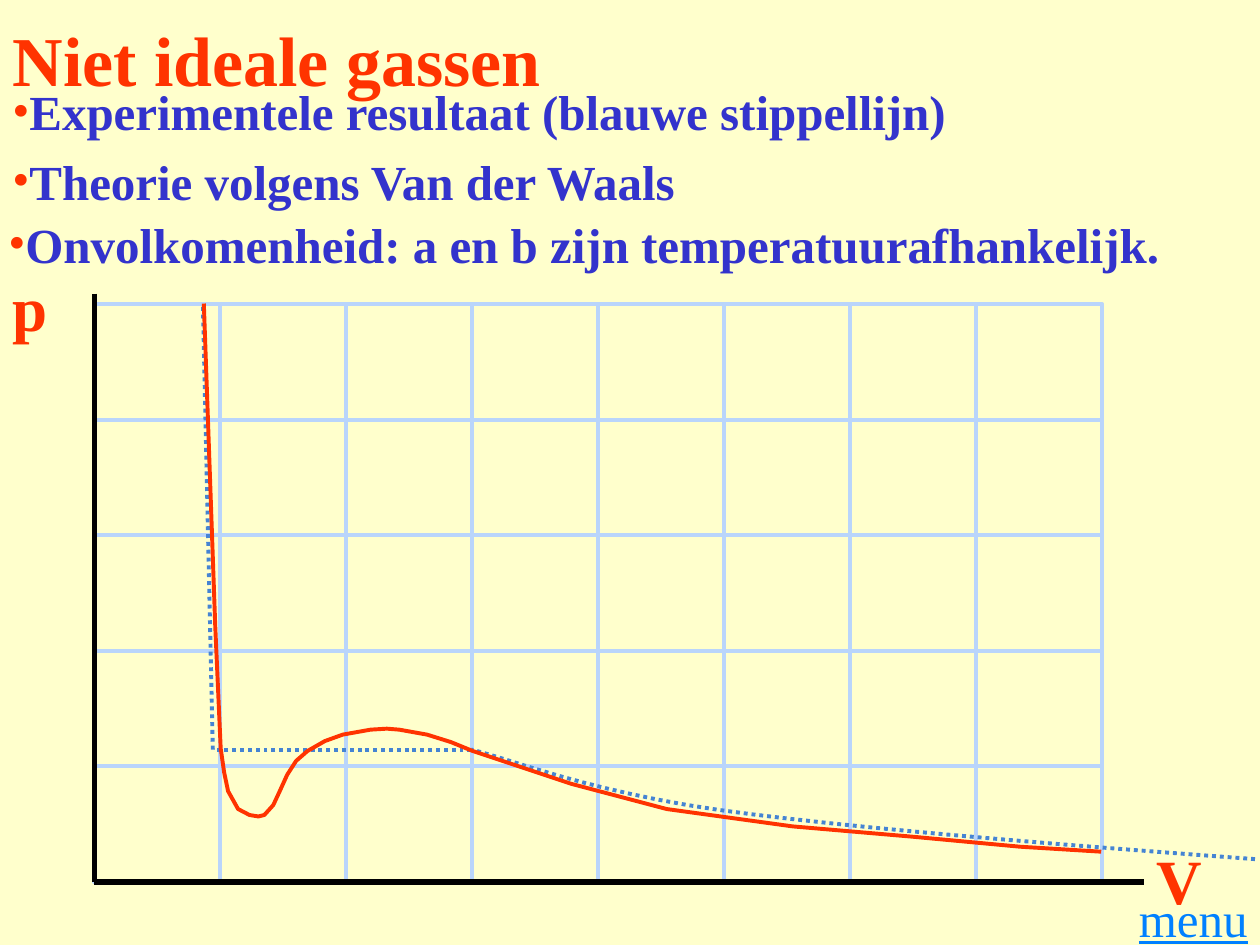
from lxml.etree import SubElement
from pptx import Presentation
from pptx.dml.color import RGBColor
from pptx.enum.dml import MSO_LINE
from pptx.enum.shapes import MSO_CONNECTOR as Connector, MSO_SHAPE as Preset
from pptx.enum.text import MSO_ANCHOR as Anchor, PP_ALIGN as Align
from pptx.oxml.ns import qn
from pptx.util import Cm, Pt

color = RGBColor.from_string
FONT = "Times New Roman"
RED, BLUE, GRID, DOTTED, BLACK, LINK = "FF3300", "3333CC", "B9D5FB", "4584D3", "000000", "0080FF"


def add_text(text, left, top, width, height, size, hex_color, bold=True, before=4):
    box = slide.shapes.add_textbox(Cm(left), Cm(top), Cm(width), Cm(height))
    box.text_frame.word_wrap = True
    paragraph = box.text_frame.paragraphs[0]
    paragraph.text = text
    paragraph.space_before = Pt(before)
    paragraph.font.name = FONT
    paragraph.font.size = Pt(size)
    paragraph.font.bold = bold
    paragraph.font.color.rgb = color(hex_color)
    return paragraph


def style_line(shape, hex_color, width=2.25, dash=None):
    shape.line.color.rgb = color(hex_color)
    shape.line.width = Pt(width)
    if dash:
        shape.line.dash_style = dash
    SubElement(shape._element.spPr, qn("a:effectLst"))


presentation = Presentation()
presentation.slide_width = Cm(25.4)
presentation.slide_height = Cm(19.05)
slide = presentation.slides.add_slide(presentation.slide_layouts[5])
slide.background.fill.solid()
slide.background.fill.fore_color.rgb = color("FFFFCC")

title = slide.shapes.title
title.left, title.top, title.width, title.height = Cm(0), Cm(0), Cm(25.4), Cm(2.34)
title.text_frame.text = "Niet ideale gassen"
title.text_frame.vertical_anchor = Anchor.MIDDLE
paragraph = title.text_frame.paragraphs[0]
paragraph.alignment = Align.LEFT
paragraph.font.name = FONT
paragraph.font.size = Pt(40)
paragraph.font.bold = True
paragraph.font.color.rgb = color(RED)

bullets = [
    ("Experimentele resultaat (blauwe stippellijn)", 0, 1.52, 25.4),
    ("Theorie volgens Van der Waals", 0, 2.92, 24.97),
    ("Onvolkomenheid: a en b zijn temperatuurafhankelijk.", -0.08, 4.19, 24.97),
]
for text, left, top, width in bullets:
    paragraph = add_text(text, left, top, width, 1.55, 28, BLUE, before=3)
    properties = paragraph._p.get_or_add_pPr()
    bullet_color = SubElement(properties, qn("a:buClr"))
    SubElement(bullet_color, qn("a:srgbClr"), val=RED)
    SubElement(properties, qn("a:buFont"), typeface=FONT)
    SubElement(properties, qn("a:buChar"), char="•")
    properties.append(properties.find(qn("a:defRPr")))

columns, rows = 8, 5
grid_left, grid_bottom = 1.9, 17.78
cell_width, cell_height = 2.54, 2.33
grid_top = grid_bottom - rows * cell_height
for column in range(columns):
    for row in range(rows):
        cell = slide.shapes.add_shape(
            Preset.RECTANGLE,
            Cm(grid_left + column * cell_width), Cm(grid_top + row * cell_height),
            Cm(cell_width), Cm(cell_height))
        cell.fill.background()
        style_line(cell, GRID)

lines = [
    (grid_left, 5.92, grid_left, grid_bottom, BLACK, 3, None),
    (grid_left, grid_bottom, 23.07, grid_bottom, BLACK, 3, None),
    (9.5, 15.11, 4.29, 15.11, DOTTED, 2.25, MSO_LINE.ROUND_DOT),
    (4.29, 15.11, 4.09, 6.12, DOTTED, 2.25, MSO_LINE.ROUND_DOT),
]
for x1, y1, x2, y2, hex_color, width, dash in lines:
    connector = slide.shapes.add_connector(Connector.STRAIGHT, Cm(x1), Cm(y1), Cm(x2), Cm(y2))
    style_line(connector, hex_color, width, dash)

add_text("p", 0, 5.28, 2.33, 1.78, 36, RED)
add_text("V", 23.07, 16.84, 2.33, 1.78, 36, RED)

bezier_segments = [
    [(25.3, 17.32), (21.21, 17.02), (17.12, 16.69), (14.5, 16.33)],
    [(14.5, 16.33), (11.86, 15.95), (10.34, 15.32), (9.5, 15.11)],
]
steps = 12
measured = [bezier_segments[0][0]]
for segment in bezier_segments:
    for step in range(1, steps + 1):
        t = step / steps
        weights = ((1 - t) ** 3, 3 * t * (1 - t) ** 2, 3 * t ** 2 * (1 - t), t ** 3)
        measured.append(tuple(
            sum(weight * point[axis] for weight, point in zip(weights, segment))
            for axis in (0, 1)))

van_der_waals = [
    (22.2, 17.17), (20.57, 17.07), (18.42, 16.87), (15.98, 16.66), (13.44, 16.31),
    (11.51, 15.8), (9.53, 15.14), (9.09, 14.96), (8.61, 14.81), (8.05, 14.71),
    (7.8, 14.69), (7.47, 14.71), (6.91, 14.81), (6.55, 14.94), (6.2, 15.14),
    (5.97, 15.34), (5.79, 15.62), (5.64, 15.95), (5.51, 16.23), (5.33, 16.43),
    (5.21, 16.46), (5.03, 16.43), (4.8, 16.31), (4.6, 15.95), (4.52, 15.57),
    (4.45, 15.09), (4.34, 12.62), (4.11, 6.12),
]
for points, hex_color, dash in [(measured, DOTTED, MSO_LINE.ROUND_DOT), (van_der_waals, RED, None)]:
    vertices = [(Cm(x), Cm(y)) for x, y in points]
    builder = slide.shapes.build_freeform(*vertices[0])
    builder.add_line_segments(vertices[1:], close=False)
    curve = builder.convert_to_shape()
    curve.fill.background()
    style_line(curve, hex_color, dash=dash)

menu = add_text("menu", 22.3, 17.78, 3.1, 1.45, 28, LINK, bold=False)
menu.alignment = Align.RIGHT
menu.font.underline = True

presentation.save("out.pptx")
